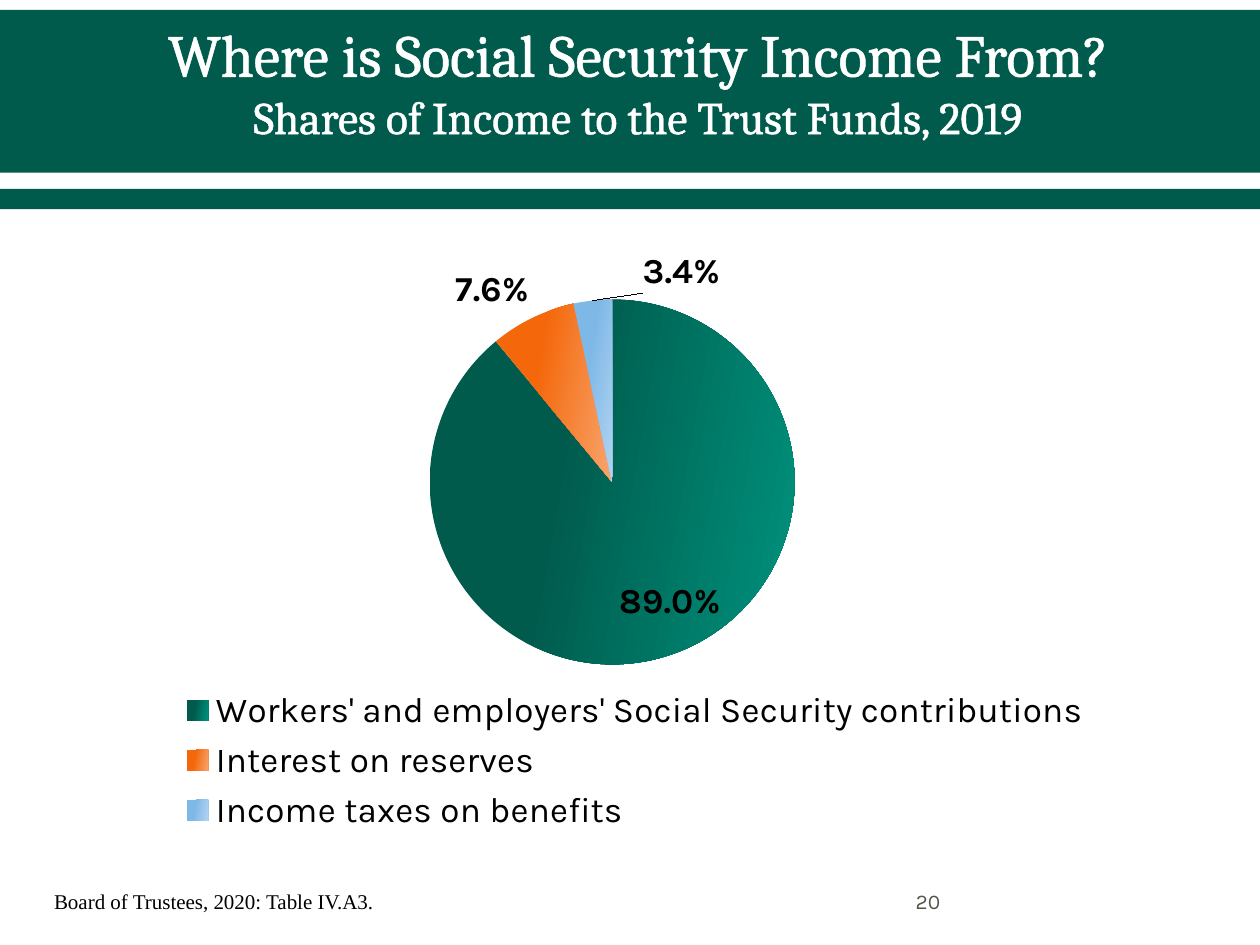
import pptx
import pptx.chart.data
import pptx.dml.color
import pptx.enum.chart
import pptx.enum.shapes
import pptx.enum.text
import pptx.oxml
import pptx.oxml.ns
import pptx.util
from pptx.util import Cm

GREEN = "005B4D"
WHITE = "FFFFFF"
BLACK = "000000"
SHARES = [
    ("Workers' and employers' Social Security contributions", 0.89, GREEN, "00927D"),
    ("Interest on reserves", 0.076, "F4680B", "F8A46D"),
    ("Income taxes on benefits", 0.034, "7EB8E7", "B2D4F1"),
]


def colour(value):
    return pptx.dml.color.RGBColor.from_string(value)


def gradient(start, end):
    stops = "".join(
        f'<a:gs pos="{place * 1000}"><a:srgbClr val="{shade}"/></a:gs>'
        for place, shade in ((0, start), (36, start), (100, end))
    )
    return pptx.oxml.parse_xml(
        f'<a:gradFill {pptx.oxml.ns.nsdecls("a")}><a:gsLst>{stops}</a:gsLst>'
        '<a:lin ang="600000" scaled="0"/></a:gradFill>'
    )


def manual_layout(**settings):
    items = "".join(f'<c:{name} val="{value}"/>' for name, value in settings.items())
    return pptx.oxml.parse_xml(
        f'<c:layout {pptx.oxml.ns.nsdecls("c")}>'
        f"<c:manualLayout>{items}</c:manualLayout></c:layout>"
    )


def replace_layout(parent, layout, index):
    for old in parent.findall(pptx.oxml.ns.qn("c:layout")):
        parent.remove(old)
    parent.insert(index, layout)


class SlideBuilder:
    def __init__(self, page):
        self.page = page

    def style(self, font, size, shade, name, bold=False):
        font.size = pptx.util.Pt(size)
        font.color.rgb = colour(shade)
        font.name = name
        font.bold = bold

    def bar(self, top, height):
        shape = self.page.shapes.add_shape(
            pptx.enum.shapes.MSO_SHAPE.RECTANGLE, 0, Cm(top), Cm(25.4), Cm(height)
        )
        shape.shadow.inherit = False
        shape.fill.solid()
        shape.fill.fore_color.rgb = colour(GREEN)
        shape.line.fill.background()

    def text(self, content, place, size, shade, name, middle=False, wrap=True):
        box = self.page.shapes.add_textbox(*map(Cm, place))
        frame = box.text_frame
        frame.word_wrap = wrap
        if middle:
            frame.vertical_anchor = pptx.enum.text.MSO_ANCHOR.MIDDLE
        frame.text = content
        for span in frame.paragraphs[0].runs:
            self.style(span.font, size, shade, name)
        return frame.paragraphs[0]

    def title(self, heading, subheading, place):
        para = self.text(f"{heading}\v{subheading}", place, 34, WHITE, "Cambria", middle=True)
        para.alignment = pptx.enum.text.PP_ALIGN.CENTER
        para.runs[1].font.size = pptx.util.Pt(26)
        for span in para.runs:
            outline = pptx.oxml.parse_xml(
                f'<a:ln {pptx.oxml.ns.nsdecls("a")} w="13970"><a:solidFill>'
                f'<a:srgbClr val="{WHITE}"/></a:solidFill></a:ln>'
            )
            span.font._element.insert(0, outline)

    def pie(self, shares, place):
        data = pptx.chart.data.CategoryChartData(number_format="0.0%")
        data.categories = [share[0] for share in shares]
        data.add_series("Series 1", [share[1] for share in shares])
        chart = self.page.shapes.add_chart(
            pptx.enum.chart.XL_CHART_TYPE.PIE, *map(Cm, place), data
        ).chart
        chart.has_title = False
        self.style(chart.font, 10, BLACK, "Karla")
        plot = chart.plots[0]
        plot.vary_by_categories = True
        series = plot.series[0]
        for index, (_, _, start, end) in enumerate(shares):
            point = series.points[index]
            point.format._element.get_or_add_spPr().append(gradient(start, end))
        self.pie_labels(series, len(shares) - 1)
        self.legend(chart)
        area = chart._chartSpace.chart.plotArea
        replace_layout(area, manual_layout(
            layoutTarget="inner", xMode="edge", yMode="edge",
            x=0.275, y=0.095, w=0.413, h=0.578), 0)

    def pie_labels(self, series, moved):
        best_fit = pptx.enum.chart.XL_LABEL_POSITION.BEST_FIT
        labels = series.data_labels
        labels.show_value = True
        labels.show_percentage = False
        labels.number_format = "0.0%"
        labels.number_format_is_linked = False
        labels.position = best_fit
        self.style(labels.font, 20, BLACK, "Karla", bold=True)
        label = series.points[moved].data_label
        label.position = best_fit
        self.style(label.font, 20, BLACK, "Karla", bold=True)
        element = labels._element.find(pptx.oxml.ns.qn("c:dLbl"))
        replace_layout(element, manual_layout(x=0.13, y=0), 1)

    def legend(self, chart):
        chart.has_legend = True
        legend = chart.legend
        legend.position = pptx.enum.chart.XL_LEGEND_POSITION.BOTTOM
        legend.include_in_layout = False
        self.style(legend.font, 20, BLACK, "Karla")
        replace_layout(legend._element, manual_layout(
            xMode="edge", yMode="edge", x=0.02, y=0.7, w=0.97, h=0.25), 1)


def main():
    deck = pptx.Presentation()
    deck.slide_width = Cm(25.4)
    deck.slide_height = Cm(19.05)
    builder = SlideBuilder(deck.slides.add_slide(deck.slide_layouts[6]))
    for top, height in ((0.2, 3.2), (3.81, 0.41), (0.28, 3.2)):
        builder.bar(top, height)
    builder.title(
        "Where is Social Security Income From?",
        "Shares of Income to the Trust Funds, 2019",
        (1.02, 0.03, 23.7, 3.18),
    )
    builder.text("20", (18.21, 17.65, 5.92, 1.02), 12, "55554A", "Karla", middle=True)
    builder.text(
        "Board of Trustees, 2020: Table IV.A3.",
        (0.84, 17.78, 7.04, 0.76), 12, BLACK, "Times New Roman", wrap=False,
    )
    builder.pie(SHARES, (2.74, 4.83, 19.94, 12.73))
    deck.save("out.pptx")


if __name__ == "__main__":
    main()
